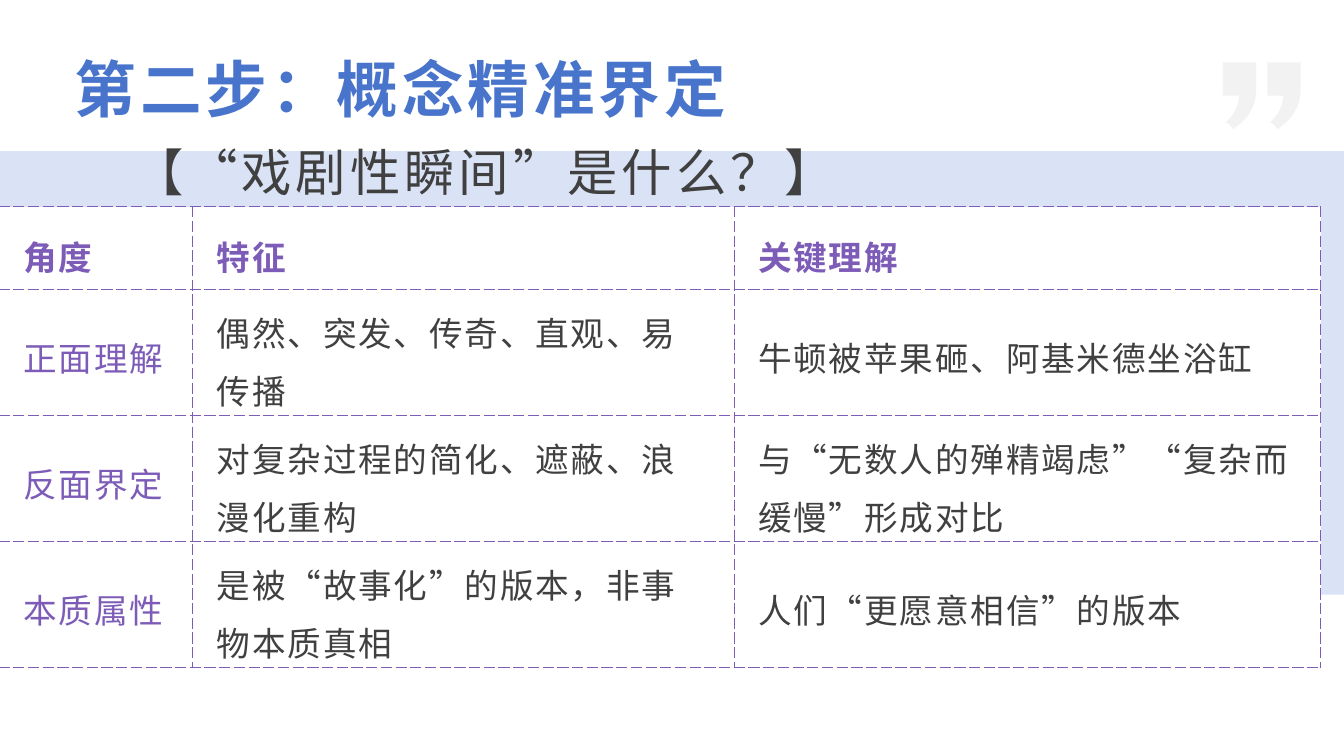
from lxml.etree import SubElement
from pptx import Presentation
from pptx.dml.color import RGBColor
from pptx.enum.text import MSO_ANCHOR, MSO_AUTO_SIZE, PP_ALIGN
from pptx.oxml import parse_xml
from pptx.oxml.ns import nsdecls, qn
from pptx.util import Inches, Pt

# Content
TITLE = "第二步：概念精准界定"
ASK = "【“戏剧性瞬间”是什么？】"
ROWS = [
    ("角度", "特征", "关键理解"),
    ("正面理解", "偶然、突发、传奇、直观、易传播", "牛顿被苹果砸、阿基米德坐浴缸"),
    ("反面界定", "对复杂过程的简化、遮蔽、浪漫化重构",
     "与“无数人的殚精竭虑”“复杂而缓慢”形成对比"),
    ("本质属性", "是被“故事化”的版本，非事物本质真相", "人们“更愿意相信”的版本"),
]

# Look
FONT = "Noto Sans CJK SC"
HUES = {"blue": "4874CB", "band": "DAE3F5", "mark": "F2F2F2",
        "violet": "7D5CB8", "ink": "404040", "white": "FFFFFF"}
WIDE, HIGH = 13.33, 7.5
COLS = (1.92, 5.37, 5.82)
TALL = (0.82, 1.25, 1.25, 1.25)
LONG = 15  # more letters than this take two lines
BAND = [(0, 1.5), (WIDE, 1.5), (WIDE, 5.9), (3.28, 5.9),
        (3.01, 6.17), (2.7, 5.9), (0, 5.9)]
# Quote mark: a pair is a corner, three pairs are a curve
MARK = [(0, 0), (0.33, 0), (0.33, 0.29),
        ((0.32, 0.54), (0.1, 0.66), (0.1, 0.66)), (0.09, 0.65),
        ((0.08, 0.63), (0.06, 0.61), (0.04, 0.6)), (0.03, 0.59),
        ((0.03, 0.59), (0.15, 0.5), (0.16, 0.33)), (0, 0.33)]


def hue(name):
    return RGBColor.from_string(HUES[name])


def write(frame, text, size=24, color="ink", bold=False, gap=1.3,
          line=None, after=0):
    frame.word_wrap = True
    frame.vertical_anchor = MSO_ANCHOR.MIDDLE
    para = frame.paragraphs[0]
    para.alignment = PP_ALIGN.LEFT
    para.space_before, para.space_after = Pt(0), Pt(after)
    if line:
        para.line_spacing = line
    run = para.add_run()
    run.text = text
    font = run.font
    font.size, font.bold, font.name = Pt(size), bold, FONT
    font.color.rgb = hue(color)
    props = run._r.get_or_add_rPr()
    props.set("lang", "zh-CN")
    props.set("spc", str(round(gap * 100)))
    SubElement(props, qn("a:ea")).set("typeface", FONT)


def inset(item, side, top, base):
    item.margin_left = item.margin_right = Inches(side)
    item.margin_top, item.margin_bottom = Inches(top), Inches(base)


def trace(nodes, steps=12):
    """Turn corners and cubic curves into plain points."""
    points = []
    for node in nodes:
        if len(node) == 2:
            points.append(node)
            continue
        ends = (points[-1], *node)
        for step in range(1, steps + 1):
            t = step / steps
            share = ((1 - t) ** 3, 3 * t * (1 - t) ** 2,
                     3 * t * t * (1 - t), t ** 3)
            points.append(tuple(sum(s * end[axis] for s, end in zip(share, ends))
                                for axis in (0, 1)))
    return points


def outline(shapes, points, color, left=0, top=0):
    spots = [(Inches(left + x), Inches(top + y)) for x, y in points]
    pen = shapes.build_freeform(*spots[0])
    pen.add_line_segments(spots[1:], close=True)
    shape = pen.convert_to_shape()
    shape.shadow.inherit = False
    shape.fill.solid()
    shape.fill.fore_color.rgb = hue(color)
    shape.line.fill.background()


def border(cell):
    props = cell._tc.get_or_add_tcPr()
    for spot, side in enumerate(("lnL", "lnR", "lnT", "lnB")):
        props.insert(spot, parse_xml(
            f'<a:{side} {nsdecls("a")} w="{Pt(0.75)}"><a:solidFill>'
            f'<a:srgbClr val="{HUES["violet"]}"/></a:solidFill>'
            f'<a:prstDash val="dash"/></a:{side}>'))


def main():
    deck = Presentation()
    deck.slide_width, deck.slide_height = Inches(WIDE), Inches(HIGH)
    slide = deck.slides.add_slide(deck.slide_layouts[5])
    shapes = slide.shapes

    # Band and quote marks
    outline(shapes, BAND, "band")
    marks = shapes.add_group_shape()
    for left in (12.13, 12.57):
        outline(marks.shapes, trace(MARK), "mark", left, 0.62)

    # Title
    title = shapes.title
    title.left, title.top = Inches(0.67), Inches(0.5)
    title.width, title.height = Inches(10.5), Inches(0.83)
    title.text_frame.auto_size = MSO_AUTO_SIZE.NONE
    inset(title.text_frame, 0.07, 0.03, 0.03)
    write(title.text_frame, TITLE, size=44, color="blue", bold=True,
          gap=2.8, line=0.9)

    # Table: long cells get thin insets so that the rows keep their height
    grid = shapes.add_table(len(TALL), len(COLS), Inches(-0.01), Inches(2.05),
                            Inches(sum(COLS)), Inches(sum(TALL))).table
    grid.first_row = grid.horz_banding = False
    for col, width in zip(grid.columns, COLS):
        col.width = Inches(width)
    for row, height in zip(grid.rows, TALL):
        row.height = Inches(height)
    for r, texts in enumerate(ROWS):
        for c, text in enumerate(texts):
            cell = grid.cell(r, c)
            head = r == 0
            if len(text) >= LONG:
                inset(cell, 0.24, 0.08, 0)
            else:
                inset(cell, 0.24, 0.15, 0.08 if head else 0.15)
            cell.fill.solid()
            cell.fill.fore_color.rgb = hue("white")
            border(cell)
            write(cell.text_frame, text, bold=head, line=1.2,
                  color="violet" if head or c == 0 else "ink")
            cell.vertical_anchor = MSO_ANCHOR.MIDDLE

    # Question
    ask = shapes.add_textbox(Inches(1.25), Inches(1.29), Inches(12), Inches(0.83))
    inset(ask.text_frame, 0.07, 0.03, 0.03)
    write(ask.text_frame, ASK, size=36, gap=2.8, after=8)

    deck.save("out.pptx")


if __name__ == "__main__":
    main()
